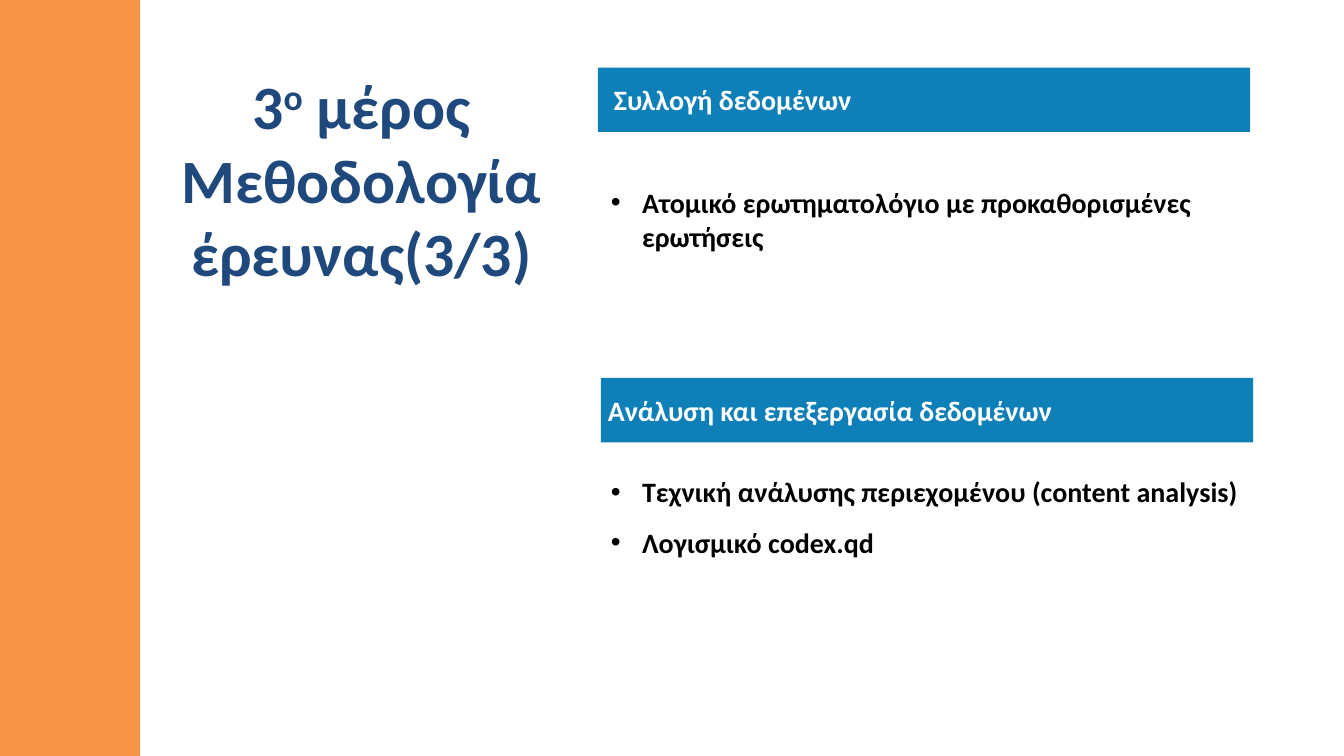
from lxml.etree import SubElement
from pptx import Presentation
from pptx.dml.color import RGBColor
from pptx.enum.shapes import MSO_SHAPE
from pptx.enum.text import MSO_ANCHOR, MSO_AUTO_SIZE, PP_ALIGN
from pptx.oxml.ns import qn
from pptx.util import Inches, Pt

ORANGE, BLUE, NAVY, WHITE, BLACK = "F79646", "0E7FB7", "1F497D", "FFFFFF", "000000"


def add_bar(left, top, width, height, color):
    bar = page.shapes.add_shape(
        MSO_SHAPE.RECTANGLE, Inches(left), Inches(top), Inches(width), Inches(height))
    bar.shadow.inherit = False
    bar.fill.solid()
    bar.fill.fore_color.rgb = RGBColor.from_string(color)
    bar.line.fill.background()


def format_text(frame, size, color, anchor):
    frame.word_wrap = True
    frame.auto_size = MSO_AUTO_SIZE.NONE
    frame.vertical_anchor = anchor
    for para in frame.paragraphs:
        for span in para.runs:
            span.font.name = "Calibri"
            span.font.size = Pt(size)
            span.font.bold = True
            span.font.color.rgb = RGBColor.from_string(color)


deck = Presentation()
deck.slide_width, deck.slide_height = Inches(13.33), Inches(7.5)
page = deck.slides.add_slide(deck.slide_layouts[5])

add_bar(0, 0, 1.39, 7.5, ORANGE)

# Title with a raised ordinal ending
title = page.shapes.title
title.left, title.top = Inches(1.29), Inches(0.61)
title.width, title.height = Inches(4.59), Inches(2.32)
ordinal = title.text_frame.paragraphs[0]
for part in ("3", "ο", " μέρος"):
    ordinal.add_run().text = part
ordinal.runs[1].font._element.set("baseline", "30000")
title.text_frame.add_paragraph().text = "Μεθοδολογία έρευνας(3/3)"
for para in title.text_frame.paragraphs:
    para.alignment = PP_ALIGN.CENTER
format_text(title.text_frame, 44, NAVY, MSO_ANCHOR.MIDDLE)

# Sections: heading, bar left, heading left, bar top, list top, list height, bullets
sections = [
    ("Συλλογή δεδομένων", 5.93, 5.99, 0.67, 1.79, 1.08,
     ["Ατομικό ερωτηματολόγιο με προκαθορισμένες ερωτήσεις"]),
    ("Ανάλυση και επεξεργασία δεδομένων", 5.96, 5.93, 3.75, 4.66, 2.57,
     ["Τεχνική ανάλυσης περιεχομένου (content analysis)", "Λογισμικό codex.qd"]),
]
for heading, bar_left, heading_left, bar_top, list_top, list_height, bullets in sections:
    add_bar(bar_left, bar_top, 6.47, 0.64, BLUE)
    heading_box = page.shapes.add_textbox(
        Inches(heading_left), Inches(bar_top), Inches(6.05), Inches(0.64))
    heading_box.text_frame.text = heading
    format_text(heading_box.text_frame, 20, WHITE, MSO_ANCHOR.MIDDLE)

    list_box = page.shapes.add_textbox(
        Inches(5.96), Inches(list_top), Inches(6.42), Inches(list_height))
    list_box.text_frame.text = "\n".join(bullets)
    format_text(list_box.text_frame, 20, BLACK, MSO_ANCHOR.TOP)
    for para in list_box.text_frame.paragraphs:
        para.space_before = para.space_after = Pt(6)
        properties = para._p.get_or_add_pPr()
        properties.set("marL", str(Inches(0.31)))
        properties.set("indent", str(-Inches(0.31)))
        SubElement(properties, qn("a:buFont"), typeface="Arial")
        SubElement(properties, qn("a:buChar"), char="•")

deck.save("out.pptx")
